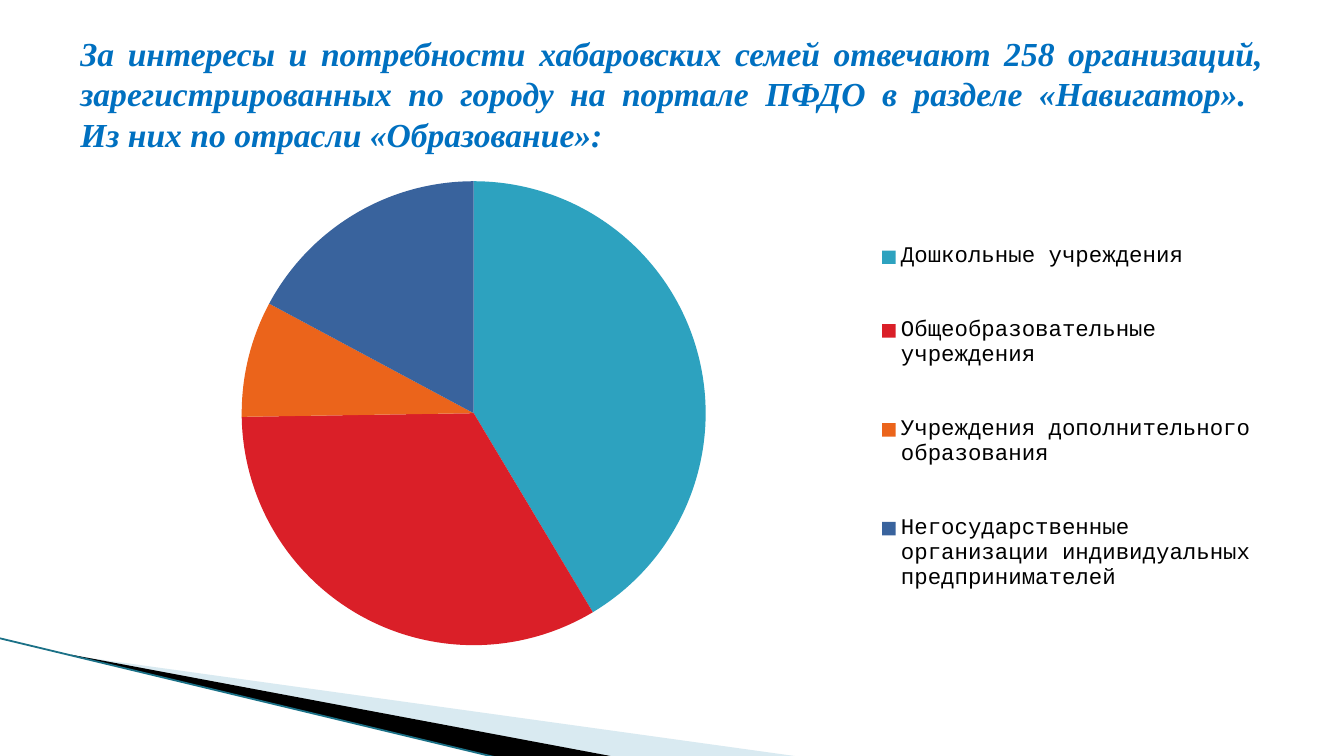
from lxml import etree
from pptx import Presentation
from pptx.chart.data import CategoryChartData
from pptx.dml.color import RGBColor
from pptx.enum.chart import XL_CHART_TYPE, XL_LEGEND_POSITION
from pptx.enum.shapes import MSO_CONNECTOR
from pptx.enum.text import MSO_ANCHOR, PP_ALIGN
from pptx.oxml import parse_xml
from pptx.oxml.ns import nsdecls, qn
from pptx.util import Inches, Pt

PIE = XL_CHART_TYPE.PIE
RIGHT = XL_LEGEND_POSITION.RIGHT
STRAIGHT = MSO_CONNECTOR.STRAIGHT
MIDDLE = MSO_ANCHOR.MIDDLE
JUSTIFY = PP_ALIGN.JUSTIFY

THEME = {
    "heading": "0070C0", "heading_font": "Times New Roman", "heading_size": 18,
    "legend": "000000", "legend_font": "Courier New", "legend_size": 12,
    "pale": "A0CBDC", "dark": "000000", "edge": "1B7187",
}
ORGANIZATIONS = [
    ("Дошкольные учреждения", 41, "2DA2BF"),
    ("Общеобразовательные учреждения", 33, "DA1F28"),
    ("Учреждения дополнительного образования", 8, "EB641B"),
    ("Негосударственные организации индивидуальных предпринимателей", 17, "39639D"),
]

deck = Presentation()
deck.slide_width = Inches(10)
deck.slide_height = deck.slide_width * 9 // 16
PERCENT_X, PERCENT_Y = deck.slide_width / 100, deck.slide_height / 100
slide = deck.slides.add_slide(deck.slide_layouts[6])


def add_text(text, *, x, y, width, height, font, size, color, align):
    frame = slide.shapes.add_textbox(
        int(x * PERCENT_X), int(y * PERCENT_Y),
        int(width * PERCENT_X), int(height * PERCENT_Y)).text_frame
    frame.word_wrap = True
    frame.vertical_anchor = MIDDLE
    paragraph = frame.paragraphs[0]
    paragraph.text = text
    paragraph.alignment = align
    for run in paragraph.runs:
        run.font.name, run.font.size = font, Pt(size)
        run.font.bold = run.font.italic = True
        run.font.color.rgb = RGBColor.from_string(color)


def place(part, x, y, width, height, target=""):
    layout = parse_xml(
        f'<c:layout {nsdecls("c")}><c:manualLayout>{target}'
        '<c:xMode val="edge"/><c:yMode val="edge"/>'
        f'<c:x val="{x}"/><c:y val="{y}"/><c:w val="{width}"/><c:h val="{height}"/>'
        '</c:manualLayout></c:layout>')
    for old in part.findall(qn("c:layout")):
        part.remove(old)
    part.insert(0 if part.find(qn("c:legendPos")) is None else 1, layout)


WEDGES = [
    ("pale", 40, [(5.5, 86.76), (59.5, 100.1), (45.6, 100.1)]),
    ("dark", 100, [(5.3, 86.6), (45.7, 100.1), (37.2, 100.27), (5.4, 86.76)]),
]
for tone, opacity, corners in WEDGES:
    points = [(int(x * PERCENT_X), int(y * PERCENT_Y)) for x, y in corners]
    outline = slide.shapes.build_freeform(*points[0])
    outline.add_line_segments(points[1:], close=True)
    wedge = outline.convert_to_shape()
    wedge.shadow.inherit = False
    wedge.fill.solid()
    wedge.fill.fore_color.rgb = RGBColor.from_string(THEME[tone])
    wedge.line.fill.background()
    if opacity < 100:
        tint = wedge._element.spPr.find(qn("a:solidFill"))[0]
        etree.SubElement(tint, qn("a:alpha")).set("val", str(opacity * 1000))

edge = slide.shapes.add_connector(
    STRAIGHT, int(-0.1 * PERCENT_X), int(84.4 * PERCENT_Y),
    int(37.1 * PERCENT_X), int(100.27 * PERCENT_Y))
edge.line.color.rgb = RGBColor.from_string(THEME["edge"])
edge.line.width = Pt(0.95)
etree.SubElement(edge._element.spPr, qn("a:effectLst"))

shares = CategoryChartData()
shares.categories = [name for name, _, _ in ORGANIZATIONS]
shares.add_series("Series 1", [count for _, count, _ in ORGANIZATIONS])
chart = slide.shapes.add_chart(
    PIE, int(5.1 * PERCENT_X), int(22 * PERCENT_Y),
    int(90 * PERCENT_X), int(66 * PERCENT_Y), shares).chart
chart.has_title = False
chart.has_legend = True
chart.legend.position = RIGHT
chart.legend.include_in_layout = False
for font in (chart.font, chart.legend.font):
    font.name = THEME["legend_font"]
    font.size = Pt(THEME["legend_size"])
    font.color.rgb = RGBColor.from_string(THEME["legend"])
pie = chart.plots[0]
pie.vary_by_categories = True
for index, (_, _, color) in enumerate(ORGANIZATIONS):
    sector = pie.series[0].points[index].format
    sector.fill.solid()
    sector.fill.fore_color.rgb = RGBColor.from_string(color)
    sector.line.fill.background()
place(chart._chartSpace.chart.plotArea, 0.14, 0.03, 0.39, 0.93, '<c:layoutTarget val="inner"/>')
place(chart.legend._element, 0.66, 0.06, 0.33, 0.89)

add_text(
    "За интересы и потребности хабаровских семей отвечают 258 организаций, "
    "зарегистрированных по городу на портале ПФДО в разделе «Навигатор». \v"
    "Из них по отрасли «Образование»:",
    x=5, y=4, width=90, height=16.7, font=THEME["heading_font"],
    size=THEME["heading_size"], color=THEME["heading"], align=JUSTIFY)

deck.save("out.pptx")
